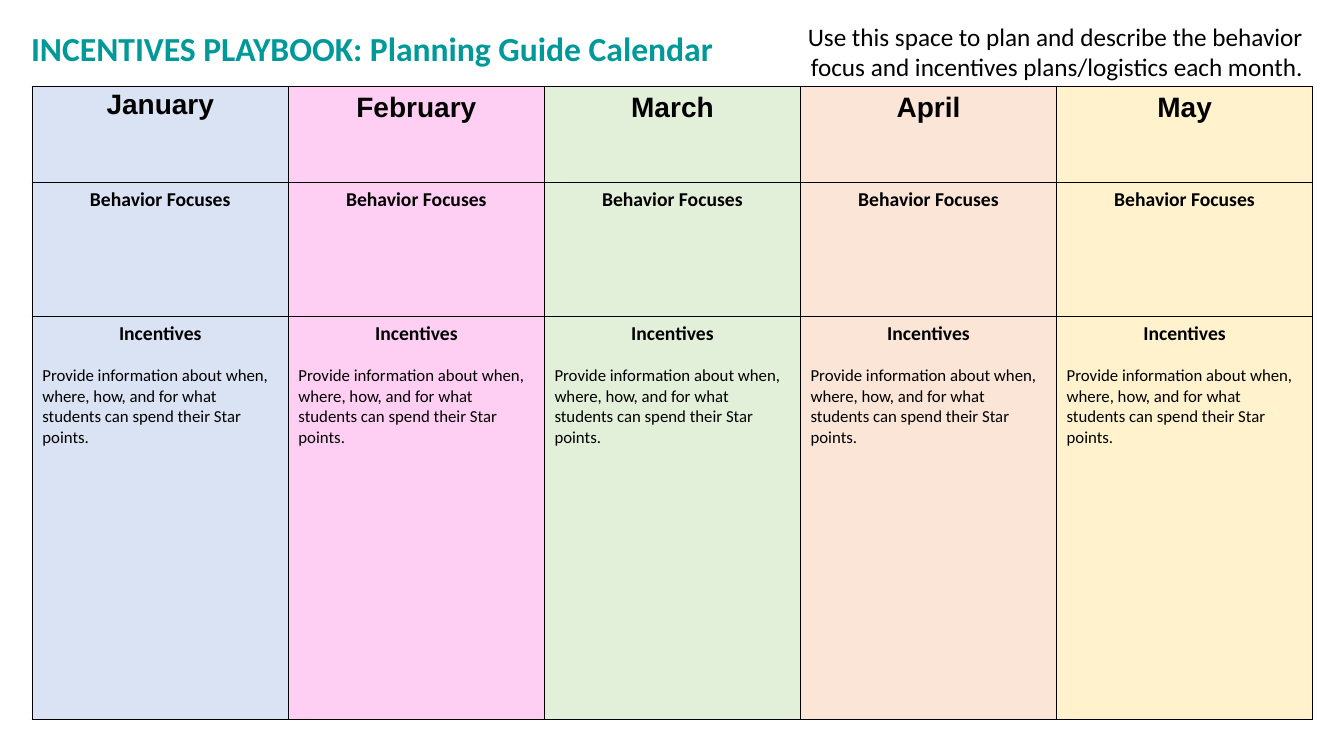
"""Builds the five-month incentives planning calendar slide."""
from lxml.etree import SubElement
from pptx import Presentation
from pptx.dml.color import RGBColor
from pptx.enum.text import MSO_ANCHOR, PP_ALIGN
from pptx.oxml import parse_xml
from pptx.oxml.ns import nsdecls, qn
from pptx.util import Pt

PX = 9144
COLORS = {
    "title": "009999", "ink": "000000",
    "January": "DAE3F3", "February": "FF33CC", "March": "E2F0D9",
    "April": "FBE5D6", "May": "FFF2CC",
}
MONTHS = ["January", "February", "March", "April", "May"]
ROW_HEIGHTS = [95, 133, 400]
COLUMN_WIDTH = 254
FEBRUARY_OPACITY = 23
PROMPT = ("Provide information about when, where, how, and for what "
          "students can spend their Star points.")
HEADING = {"size": Pt(14), "name": "Calibri", "bold": True}
SECTIONS = [
    [("{month}", {"size": Pt(20), "name": "Arial", "bold": True}, {"alignment": PP_ALIGN.CENTER})],
    [("Behavior Focuses", HEADING, {"alignment": PP_ALIGN.CENTER})],
    [("Incentives", HEADING, {"alignment": PP_ALIGN.CENTER}),
     (PROMPT, {"size": Pt(12), "name": "Calibri", "bold": False},
      {"alignment": PP_ALIGN.LEFT, "space_before": Pt(14.6)})],
]


def write(frame, paragraphs, color="ink"):
    for index, (text, font_format, layout) in enumerate(paragraphs):
        paragraph = frame.add_paragraph() if index else frame.paragraphs[0]
        run = paragraph.add_run()
        run.text = text
        run.font.color.rgb = RGBColor.from_string(COLORS[color])
        for target, values in ((run.font, font_format), (paragraph, layout)):
            for key, value in values.items():
                setattr(target, key, value)


def paint(cell, month):
    properties = cell._tc.get_or_add_tcPr()
    for side in ("lnL", "lnR", "lnT", "lnB"):
        properties.append(parse_xml(
            f'<a:{side} {nsdecls("a")} w="12700"><a:solidFill>'
            f'<a:srgbClr val="{COLORS["ink"]}"/></a:solidFill></a:{side}>'))
    cell.fill.solid()
    cell.fill.fore_color.rgb = RGBColor.from_string(COLORS[month])
    if month == "February":
        shade = properties.find(qn("a:solidFill")).find(qn("a:srgbClr"))
        SubElement(shade, qn("a:alpha")).set("val", str(FEBRUARY_OPACITY * 1000))


deck = Presentation()
deck.slide_width, deck.slide_height = 1333 * PX, 750 * PX
slide = deck.slides.add_slide(deck.slide_layouts[6])

title = slide.shapes.add_textbox(21 * PX, 23 * PX, 703 * PX, 81 * PX).text_frame
title.word_wrap = False
title.vertical_anchor = MSO_ANCHOR.TOP
write(title, [("INCENTIVES PLAYBOOK: Planning Guide Calendar",
               {"size": Pt(24), "name": "Calibri", "bold": True}, {})], "title")

calendar = slide.shapes.add_table(
    len(SECTIONS), len(MONTHS), 32 * PX, 86 * PX,
    COLUMN_WIDTH * len(MONTHS) * PX, sum(ROW_HEIGHTS) * PX).table
calendar.first_row = calendar.horz_banding = False
for column in calendar.columns:
    column.width = COLUMN_WIDTH * PX
for row, height in zip(calendar.rows, ROW_HEIGHTS):
    row.height = height * PX

for row_index, section in enumerate(SECTIONS):
    for column_index, month in enumerate(MONTHS):
        cell = calendar.cell(row_index, column_index)
        paint(cell, month)
        write(cell.text_frame, [(text.format(month=month), font_format, layout)
                                for text, font_format, layout in section])

january = calendar.cell(0, 0)
january_margins = {"margin_left": 7 * PX, "margin_right": 7 * PX,
                   "margin_top": 0, "margin_bottom": 0}
for key, value in january_margins.items():
    setattr(january, key, value)
january.text_frame.paragraphs[0].line_spacing = 1.07

instructions = slide.shapes.add_textbox(775 * PX, 16 * PX, 527 * PX, 71 * PX).text_frame
instructions.word_wrap = True
write(instructions, [("Use this space to plan and describe the behavior focus and "
                      "incentives plans/logistics each month.",
                      {"size": Pt(18), "name": "Calibri"},
                      {"alignment": PP_ALIGN.RIGHT})])

deck.save("out.pptx")
